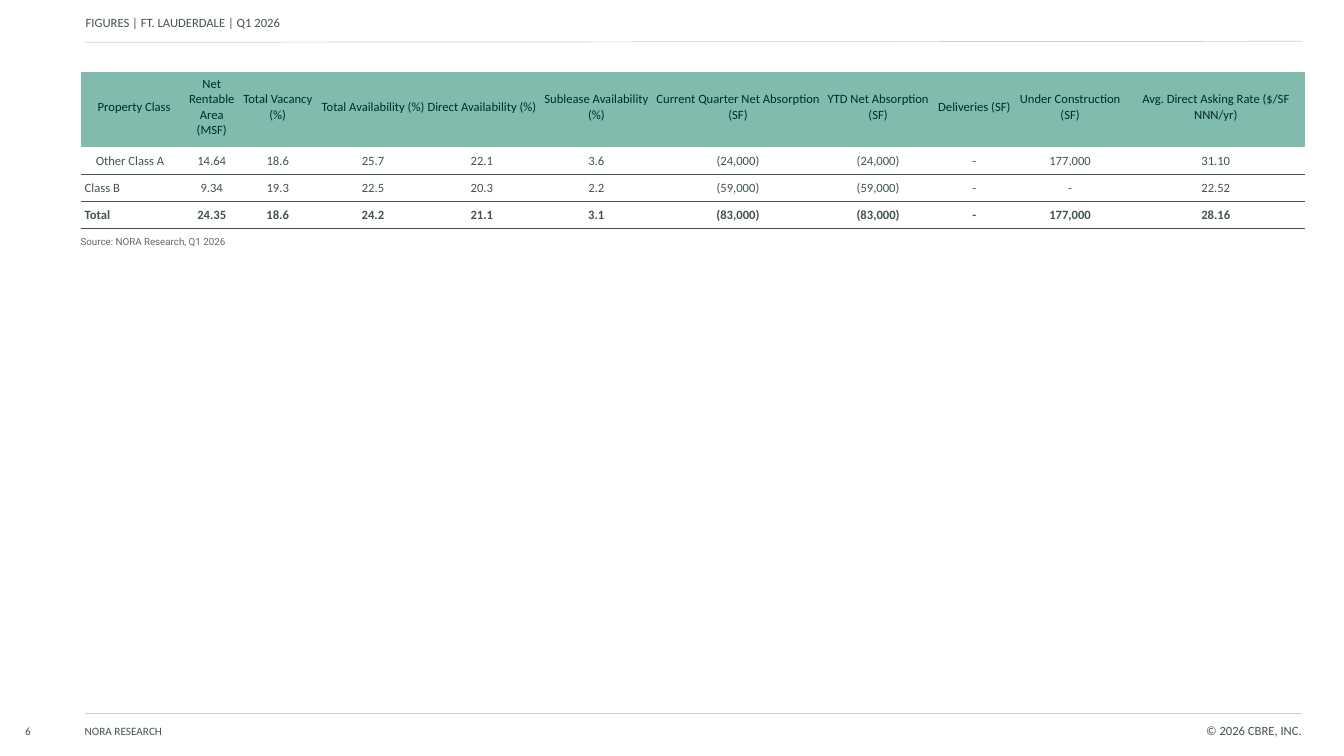
from lxml.etree import SubElement
from pptx import Presentation
from pptx.dml.color import RGBColor
from pptx.enum.shapes import MSO_CONNECTOR
from pptx.enum.text import MSO_ANCHOR, PP_ALIGN
from pptx.oxml import parse_xml
from pptx.oxml.ns import nsdecls, qn
from pptx.util import Inches, Pt

COLORS = {
    "text": "435254",
    "heading": "012A2D",
    "period": "435154",
    "source": "666666",
    "header_fill": "80BBAD",
    "body_fill": "FFFFFF",
    "rule": "CAD1D3",
}

HEADINGS = [
    "Property Class", "Net Rentable Area (MSF)", "Total Vacancy (%)",
    "Total Availability (%)", "Direct Availability (%)",
    "Sublease Availability (%)", "Current Quarter Net Absorption (SF)",
    "YTD Net Absorption (SF)", "Deliveries (SF)", "Under Construction (SF)",
    "Avg. Direct Asking Rate ($/SF NNN/yr)",
]
CLASSES = [
    ["Other Class A", "14.64", "18.6", "25.7", "22.1", "3.6",
     "(24,000)", "(24,000)", "-", "177,000", "31.10"],
    ["Class B", "9.34", "19.3", "22.5", "20.3", "2.2",
     "(59,000)", "(59,000)", "-", "-", "22.52"],
    ["Total", "24.35", "18.6", "24.2", "21.1", "3.1",
     "(83,000)", "(83,000)", "-", "177,000", "28.16"],
]
SOURCE = "Source: NORA Research, Q1 2026"
COLUMN_WIDTHS = [1.06, 0.48, 0.83, 1.06, 1.1, 1.17, 1.64, 1.14, 0.77, 1.13, 1.76]
ROW_HEIGHTS = [0.75, 0.27, 0.27, 0.27, 0.27]
LABEL_INDENTS = {"Other Class A": 0.15}

PAGE_LABELS = [
    ("6", (0.25, 7.19, 0.28, 0.2), {"size": 8}),
    ("NORA RESEARCH", (0.84, 7.19, 3.66, 0.2), {"size": 8}),
    ("© 2026 CBRE, INC", (5.69, 7.19, 7.22, 0.2),
     {"align": PP_ALIGN.RIGHT, "spacing": 0.9, "ending": "."}),
    ("FIGURES | FT. LAUDERDALE | Q1 2026", (0.85, 0, 4.95, 0.3),
     {"spacing": 0.9, "anchor": MSO_ANCHOR.BOTTOM}),
]
RULES = [(0.84, 7.08, 12.91, 7.08), (0.84, 0.42, 12.91, 0.41)]
NO_GRID_STYLE = "{2D5ABB26-0587-4C30-8999-92F81FD0307C}"


def write(frame, text, *, size=9, font="Calibri", color="text", bold=False,
          align=PP_ALIGN.LEFT, spacing=None, anchor=None, ending=""):
    frame.word_wrap = True
    if anchor is not None:
        frame.vertical_anchor = anchor
    paragraph = frame.paragraphs[0]
    paragraph.alignment = align
    if spacing:
        paragraph.line_spacing = spacing
    for part, shade in ((text, color), (ending, "period")):
        if part:
            run = paragraph.add_run()
            run.text = part
            run.font.size = Pt(size)
            run.font.name = font
            run.font.bold = bold
            run.font.color.rgb = RGBColor.from_string(COLORS[shade])


def set_margins(box, left=0, right=0, bottom=0):
    box.margin_left = Inches(left)
    box.margin_right = Inches(right)
    box.margin_top = 0
    box.margin_bottom = Inches(bottom)


def fill_cell(cell, text, *, fill="body_fill", left=0, right=0, bottom=0,
              underline=False, **text_format):
    cell.vertical_anchor = MSO_ANCHOR.MIDDLE
    set_margins(cell, left, right, bottom)
    cell.fill.solid()
    cell.fill.fore_color.rgb = RGBColor.from_string(COLORS[fill])
    write(cell.text_frame, text, **text_format)
    if underline:
        cell._tc.get_or_add_tcPr().insert(0, parse_xml(
            f'<a:lnB {nsdecls("a")} w="6350"><a:solidFill>'
            f'<a:srgbClr val="{COLORS["text"]}"/></a:solidFill></a:lnB>'))


def add_page_frame(slide):
    for text, position, text_format in PAGE_LABELS:
        label = slide.shapes.add_textbox(*map(Inches, position)).text_frame
        set_margins(label)
        write(label, text, **text_format)
    for ends in RULES:
        rule = slide.shapes.add_connector(MSO_CONNECTOR.STRAIGHT, *map(Inches, ends))
        rule.line.color.rgb = RGBColor.from_string(COLORS["rule"])
        rule.line.width = Pt(0.5)
        SubElement(rule._element.spPr, qn("a:effectLst"))


def add_market_table(slide):
    market = slide.shapes.add_table(
        len(ROW_HEIGHTS), len(COLUMN_WIDTHS), Inches(0.8), Inches(0.71),
        Inches(sum(COLUMN_WIDTHS)), Inches(sum(ROW_HEIGHTS))).table
    market.first_row = False
    market.horz_banding = False
    market._tbl.tblPr.find(qn("a:tableStyleId")).text = NO_GRID_STYLE
    for column, width in zip(market.columns, COLUMN_WIDTHS):
        column.width = Inches(width)
    for row, height in zip(market.rows, ROW_HEIGHTS):
        row.height = Inches(height)

    for column, heading in enumerate(HEADINGS):
        fill_cell(market.cell(0, column), heading, fill="header_fill", bottom=0.04,
                  color="heading", align=PP_ALIGN.CENTER)
    for row, values in enumerate(CLASSES, start=1):
        for column, value in enumerate(values):
            is_label = column == 0
            fill_cell(market.cell(row, column), value, underline=True,
                      left=LABEL_INDENTS.get(value, 0.04) if is_label else 0,
                      bold=values[0] == "Total",
                      align=PP_ALIGN.LEFT if is_label else PP_ALIGN.CENTER)

    last = len(ROW_HEIGHTS) - 1
    source = market.cell(last, 0)
    source.merge(market.cell(last, len(COLUMN_WIDTHS) - 1))
    fill_cell(source, SOURCE, right=0.03, size=7, font="Roboto", color="source")


def main():
    deck = Presentation()
    deck.slide_width, deck.slide_height = Inches(13.33), Inches(7.5)
    slide = deck.slides.add_slide(deck.slide_layouts[6])
    add_page_frame(slide)
    add_market_table(slide)
    deck.save("out.pptx")


if __name__ == "__main__":
    main()
